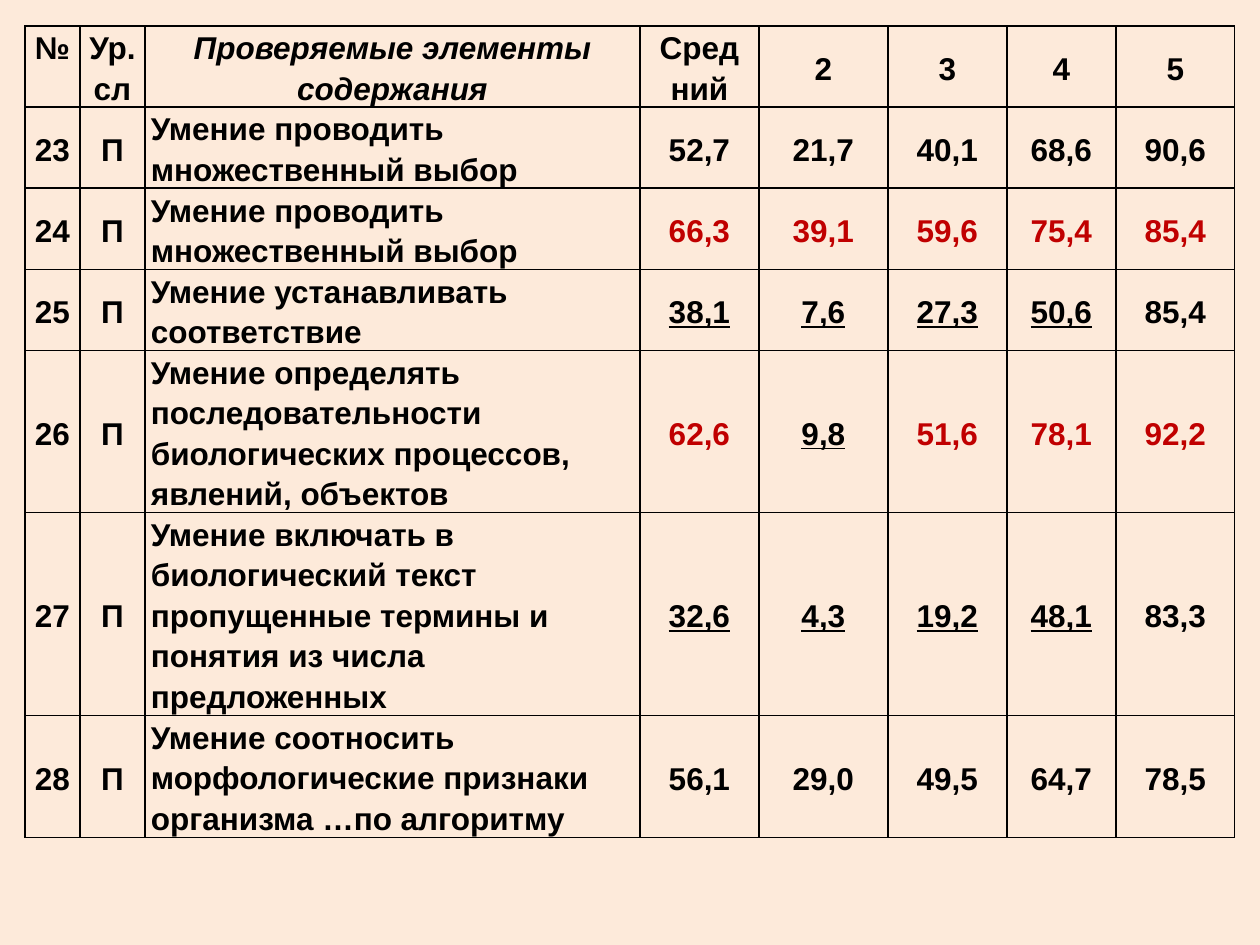
from lxml.etree import SubElement
from pptx import Presentation
from pptx.dml.color import RGBColor
from pptx.enum.text import MSO_ANCHOR, PP_ALIGN
from pptx.oxml.ns import qn
from pptx.util import Pt

PX = 914400 // 126
COLORS = {"background": "FDEADA", "text": "000000", "high": "C00000"}
FONT = "Arial"

COLUMN_WIDTHS = [55, 65, 495, 119, 129, 119, 109, 119]
ROW_HEIGHTS = [81, 81, 81, 81, 162, 203, 122]
SKILL_COLUMN = 2

HEADERS = ["№", "Ур. сл", "Проверяемые элементы содержания",
           "Сред\nний", "2", "3", "4", "5"]
# Task number, skill, scores, score marks: h = high (red), l = low (underlined)
TASKS = [
    ("23", "Умение проводить множественный выбор", "52,7 21,7 40,1 68,6 90,6", "-----"),
    ("24", "Умение проводить множественный выбор", "66,3 39,1 59,6 75,4 85,4", "hhhhh"),
    ("25", "Умение устанавливать соответствие", "38,1 7,6 27,3 50,6 85,4", "llll-"),
    ("26", "Умение определять последовательности биологических процессов, "
           "явлений, объектов", "62,6 9,8 51,6 78,1 92,2", "hlhhh"),
    ("27", "Умение включать в биологический текст пропущенные термины и понятия "
           "из числа предложенных", "32,6 4,3 19,2 48,1 83,3", "llll-"),
    ("28", "Умение соотносить морфологические признаки организма …по алгоритму",
     "56,1 29,0 49,5 64,7 78,5", "-----"),
]


def px(length):
    return length * PX


def write_text(text_frame, text, color="text", align=PP_ALIGN.CENTER,
               italic=False, underline=False):
    text_frame.text = text
    for paragraph in text_frame.paragraphs:
        paragraph.alignment = align
        paragraph.line_spacing = 1.15
        font = paragraph.runs[0].font
        font.name, font.size = FONT, Pt(18)
        font.bold, font.italic, font.underline = True, italic, underline
        font.color.rgb = RGBColor.from_string(COLORS[color])


class SlideBuilder:
    def __init__(self, presentation):
        self.slide = presentation.slides.add_slide(presentation.slide_layouts[6])
        fill = self.slide.background.fill
        fill.solid()
        fill.fore_color.rgb = RGBColor.from_string(COLORS["background"])

    def table(self, left, top, widths, heights):
        table = self.slide.shapes.add_table(
            len(heights), len(widths), px(left), px(top),
            px(sum(widths)), px(sum(heights))).table
        table.first_row = table.horz_banding = False
        for column, width in zip(table.columns, widths):
            column.width = px(width)
        for row, height in zip(table.rows, heights):
            row.height = px(height)
        return table

    def cell(self, cell, text, anchor=MSO_ANCHOR.MIDDLE, **text_format):
        cell.margin_left = cell.margin_right = px(6)
        cell.margin_top = cell.margin_bottom = 0
        cell.vertical_anchor = anchor
        write_text(cell.text_frame, text, **text_format)
        self.borders(cell)
        cell.fill.background()

    def borders(self, cell):
        properties = cell._tc.get_or_add_tcPr()
        for side in ("a:lnL", "a:lnR", "a:lnT", "a:lnB"):
            line = SubElement(properties, qn(side), w=str(Pt(1)))
            fill = SubElement(line, qn("a:solidFill"))
            SubElement(fill, qn("a:srgbClr"), val=COLORS["text"])


def main():
    presentation = Presentation()
    presentation.slide_width, presentation.slide_height = px(1260), px(945)
    builder = SlideBuilder(presentation)
    table = builder.table(25, 26, COLUMN_WIDTHS, ROW_HEIGHTS)

    # Header row
    for column, header in enumerate(HEADERS):
        builder.cell(
            table.cell(0, column), header, italic=column == SKILL_COLUMN,
            anchor=MSO_ANCHOR.TOP if column <= SKILL_COLUMN else MSO_ANCHOR.MIDDLE)

    # Task rows
    for row, (number, skill, scores, marks) in enumerate(TASKS, start=1):
        builder.cell(table.cell(row, 0), number)
        builder.cell(table.cell(row, 1), "П")
        builder.cell(table.cell(row, SKILL_COLUMN), skill,
                     anchor=MSO_ANCHOR.TOP, align=PP_ALIGN.LEFT)
        for column, (score, mark) in enumerate(zip(scores.split(), marks), SKILL_COLUMN + 1):
            builder.cell(table.cell(row, column), score,
                         color="high" if mark == "h" else "text",
                         underline=mark == "l")

    presentation.save("out.pptx")


if __name__ == "__main__":
    main()
